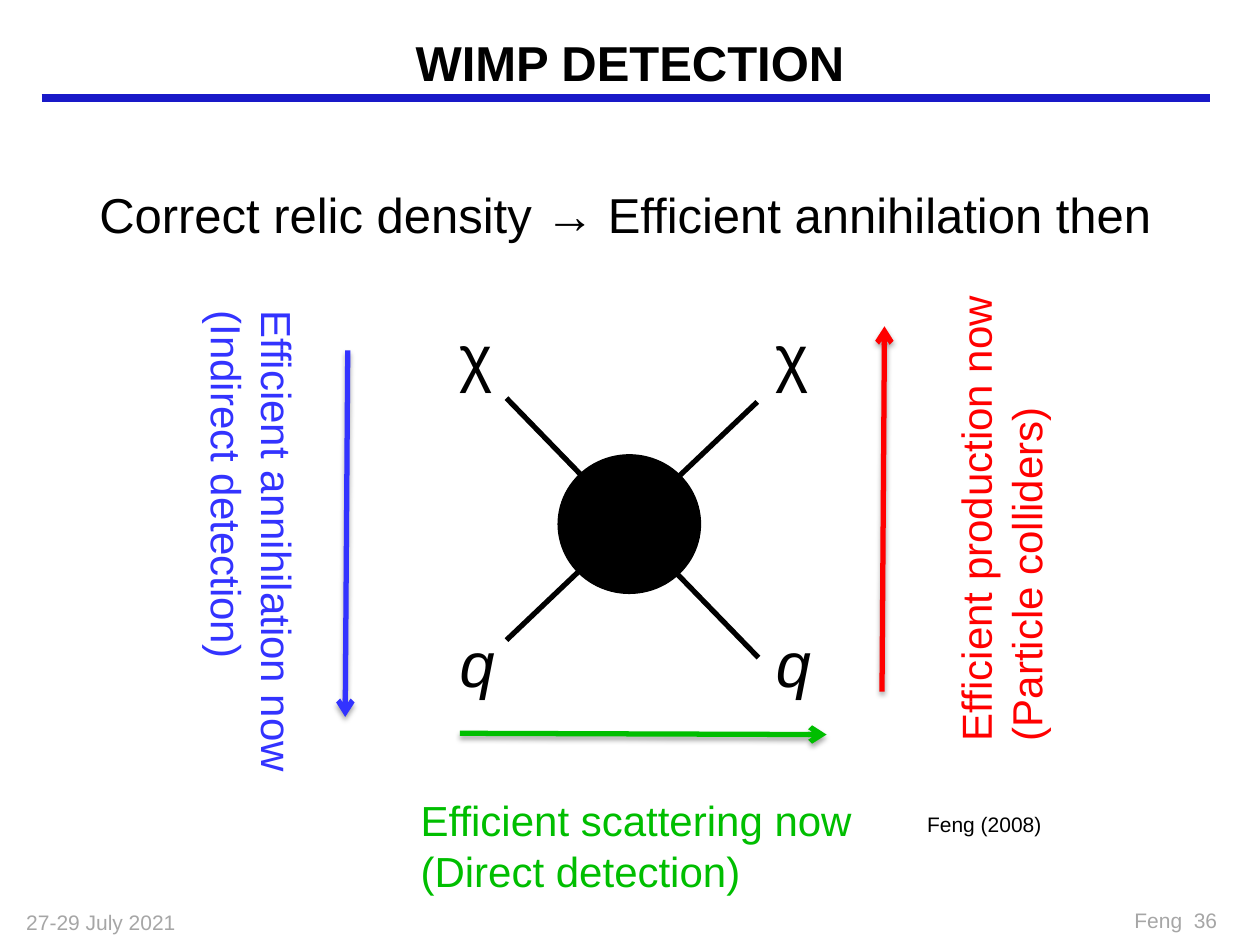
import pptx
import pptx.util
import pptx.dml.color
import pptx.enum.shapes
import pptx.enum.text
import pptx.oxml
import pptx.oxml.ns
from lxml import etree

Inches, Pt = pptx.util.Inches, pptx.util.Pt
RGBColor = pptx.dml.color.RGBColor
ALIGN = pptx.enum.text.PP_ALIGN
ANCHOR = pptx.enum.text.MSO_ANCHOR
AUTO = pptx.enum.text.MSO_AUTO_SIZE

BLACK = RGBColor(0x00, 0x00, 0x00)
GRAY = RGBColor(0xA6, 0xA6, 0xA6)
NAVY = RGBColor(0x19, 0x19, 0xC8)
BLUE = RGBColor(0x33, 0x33, 0xFF)
GREEN = RGBColor(0x00, 0xBE, 0x00)
RED = RGBColor(0xFF, 0x00, 0x00)

RULE = (0.33, 0.78, 9.6, 0.78)
FOOTERS = [
    ("27-29 July 2021", (0.11, 7.17, 2.08, 0.31), ALIGN.LEFT),
    ("Feng  36", (7.68, 7.15, 2.08, 0.35), ALIGN.RIGHT),
]
TITLE = ("WIMP DETECTION", (0.25, 0.25, 9.5, 0.49))
CLAIM = ("Correct relic density → Efficient annihilation then", (0.69, 1.47, 9.23, 0.67))
CREDIT = ("Feng (2008)", (7.26, 6.39, 1.12, 0.3))
PARTICLE_COLUMNS = (3.55, 6.06)
PARTICLE_ROWS = [("χ", 2.47, False), ("q", 4.91, True)]
LEGS = [(4.02, 3.16, 6.02, 5.22), (4.02, 5.08, 6.01, 3.19)]
BLOB = (4.43, 3.61, 1.13, 1.1)
PROCESSES = [
    (["Efficient annihilation now", "(Indirect detection)"],
     (0.05, 3.86, 3.9, 0.91), 90, BLUE, (2.76, 2.78, 2.74, 5.69)),
    (["Efficient scattering now", "(Direct detection)"],
     (3.24, 6.26, 3.66, 0.91), 0, GREEN, (3.65, 5.82, 6.56, 5.83)),
    (["Efficient production now", "(Particle colliders)"],
     (6.06, 3.64, 3.77, 0.91), 270, RED, (7.0, 5.49, 7.02, 2.59)),
]
SHADOW = {"blurRad": Pt(3.1), "dist": Pt(1.8), "dir": 90 * 60000, "rotWithShape": 0}


def inches(values):
    return [Inches(v) for v in values]


def child(parent, tag, **attrs):
    el = etree.SubElement(parent, pptx.oxml.ns.qn(tag))
    for name, value in attrs.items():
        el.set(name, str(value))
    return el


def add_text(s, lines, box, size, color=BLACK, align=ALIGN.LEFT, fit=False,
             rotation=0, anchor=ANCHOR.TOP, **style):
    sp = s.shapes.add_textbox(*inches(box))
    sp.rotation = rotation
    tf = sp.text_frame
    frame = {"word_wrap": not fit, "vertical_anchor": anchor,
             "auto_size": AUTO.SHAPE_TO_FIT_TEXT if fit else AUTO.NONE}
    for name, value in frame.items():
        setattr(tf, name, value)
    tf.text = "\n".join(lines)
    font = {"name": "Arial", "size": Pt(size), **style}
    for p in tf.paragraphs:
        p.alignment = align
        for r in p.runs:
            for name, value in font.items():
                setattr(r.font, name, value)
            r.font.color.rgb = color
    return sp


def add_line(s, ends, color, width, arrow=False):
    cn = s.shapes.add_connector(pptx.enum.shapes.MSO_CONNECTOR.STRAIGHT, *inches(ends))
    cn.line.color.rgb = color
    cn.line.width = Pt(width)
    if arrow:
        child(cn.line._get_or_add_ln(), "a:tailEnd", type="arrow")
    effects = child(cn._element.spPr, "a:effectLst")
    if arrow:
        shadow = child(effects, "a:outerShdw", **SHADOW)
        child(child(shadow, "a:srgbClr", val=BLACK), "a:alpha", val=35000)


def main():
    prs = pptx.Presentation()
    prs.slide_width, prs.slide_height = Inches(10), Inches(7.5)
    s = prs.slides.add_slide(prs.slide_layouts[6])

    add_line(s, RULE, NAVY, 4.5)
    for text, box, align in FOOTERS:
        add_text(s, [text], box, 12, GRAY, align)
    text, box = TITLE
    add_text(s, [text], box, 28, align=ALIGN.CENTER, anchor=ANCHOR.MIDDLE, bold=True)
    text, box = CLAIM
    p = add_text(s, [text], box, 28).text_frame.paragraphs[0]
    p.line_spacing = 0.9
    pPr = p._p.get_or_add_pPr()
    pPr.set("marL", str(Inches(0.38)))
    pPr.set("indent", str(Inches(-0.38)))

    for symbol, top, italic in PARTICLE_ROWS:
        for left in PARTICLE_COLUMNS:
            add_text(s, [symbol], (left, top, 0.48, 0.7), 36, fit=True, italic=italic)
    for ends in LEGS:
        add_line(s, ends, BLACK, 3)
    sp = s.shapes.add_shape(pptx.enum.shapes.MSO_SHAPE.OVAL, *inches(BLOB))
    sp.shadow.inherit = False
    sp.fill.solid()
    sp.fill.fore_color.rgb = BLACK
    sp.line.color.rgb = BLACK
    sp.line.width = Pt(0.75)

    for lines, box, rotation, color, ends in PROCESSES:
        add_text(s, lines, box, 24, color, fit=True, rotation=rotation)
        add_line(s, ends, color, 3, arrow=True)
    text, box = CREDIT
    add_text(s, [text], box, 12, fit=True)

    prs.save("out.pptx")


if __name__ == "__main__":
    main()
